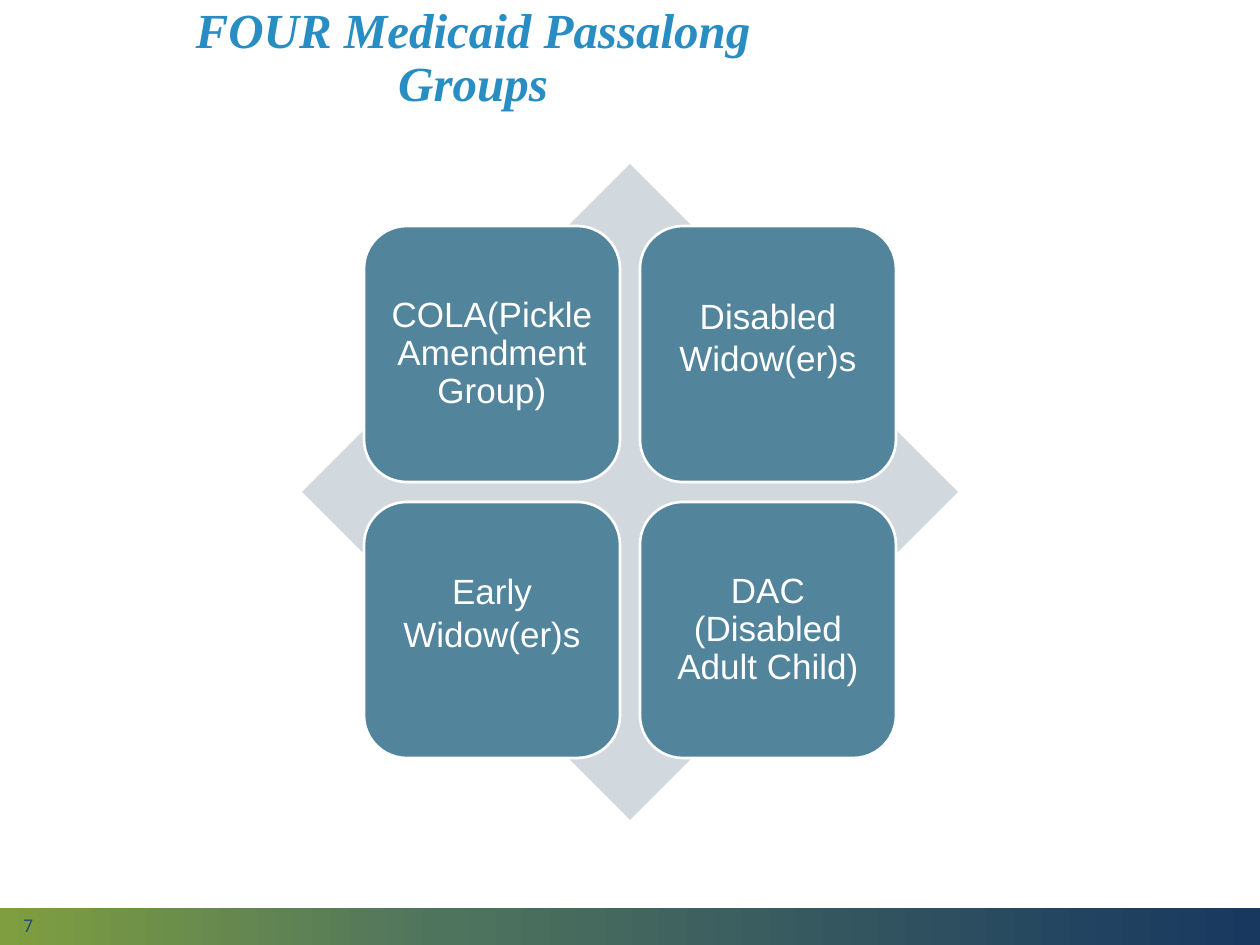
from copy import deepcopy
from typing import NamedTuple

from pptx import Presentation
from pptx.dml.color import RGBColor
from pptx.enum.shapes import MSO_SHAPE
from pptx.enum.text import MSO_ANCHOR, PP_ALIGN
from pptx.util import Pt

PX = 914400 // 126
RECT, ROUND, DIAMOND = MSO_SHAPE.RECTANGLE, MSO_SHAPE.ROUNDED_RECTANGLE, MSO_SHAPE.DIAMOND
MIDDLE = MSO_ANCHOR.MIDDLE
LEFT, CENTER = PP_ALIGN.LEFT, PP_ALIGN.CENTER

TILE, PITCH = 256, 276
GRID_X, GRID_Y = 364, 226
INSET = 10


class Box(NamedTuple):
    x: int
    y: int
    w: int
    h: int

    def emu(self) -> list[int]:
        return [side * PX for side in self]


class Group(NamedTuple):
    text: str
    spacing: float
    lift: int  # extra bottom inset that raises the text


GROUPS = [
    Group("COLA(Pickle Amendment Group)", 0.9, 0),
    Group("Disabled Widow(er)s", 1.0, 36),
    Group("Early Widow(er)s", 1.0, 36),
    Group("DAC (Disabled Adult Child)", 0.9, 0),
]


def color(code: str) -> RGBColor:
    return RGBColor.from_string(code)


def add_shape(slide, kind, box: Box, fill: str = "", line: str = ""):
    shape = slide.shapes.add_shape(kind, *box.emu())
    shape.shadow.inherit = False
    if fill:
        shape.fill.solid()
        shape.fill.fore_color.rgb = color(fill)
    if line:
        shape.line.color.rgb = color(line)
        shape.line.width = Pt(1.5)
    else:
        shape.line.fill.background()
    return shape


def write(shape, text: str, *, size: int, face: str, ink: str, align=CENTER,
          spacing: float = 1.0, bold: bool = False, italic: bool = False) -> None:
    frame = shape.text_frame
    frame.word_wrap = True
    frame.vertical_anchor = MIDDLE
    para = frame.paragraphs[0]
    para.alignment = align
    para.line_spacing = spacing
    run = para.add_run()
    run.text = text
    font = run.font
    font.size, font.name = Pt(size), face
    font.bold, font.italic = bold, italic
    font.color.rgb = color(ink)


def add_text(slide, box: Box, text: str, **style) -> None:
    write(slide.shapes.add_textbox(*box.emu()), text, **style)


def add_band(slide, box: Box, stops: list[tuple[float, str]]) -> None:
    """Draw a bar with a left-to-right gradient of any number of stops."""
    fill = add_shape(slide, RECT, box).fill
    fill.gradient()
    fill.gradient_angle = 0
    first = fill.gradient_stops[0]._gs
    for _ in stops[2:]:
        first.addnext(deepcopy(first))
    for stop, (place, code) in zip(fill.gradient_stops, stops):
        stop.position = place
        stop.color.rgb = color(code)


def add_tile(slide, index: int, group: Group) -> None:
    row, col = divmod(index, 2)
    box = Box(GRID_X + col * PITCH, GRID_Y + row * PITCH, TILE, TILE)
    tile = add_shape(slide, ROUND, box, "52849C", "FFFFFF")
    frame = tile.text_frame
    frame.margin_left = frame.margin_right = frame.margin_top = INSET * PX
    frame.margin_bottom = (INSET + group.lift) * PX
    write(tile, group.text, size=20, face="Arial", ink="FFFFFF", spacing=group.spacing)


def main() -> None:
    deck = Presentation()
    deck.slide_width, deck.slide_height = 1260 * PX, 945 * PX
    slide = deck.slides.add_slide(deck.slide_layouts[6])

    add_band(slide, Box(0, 908, 1260, 37),
             [(0, "7F9E3F"), (0.35, "4F745E"), (1, "183860")])
    add_text(slide, Box(11, 916, 284, 19), "7",
             size=10, face="Roboto", ink="1F497D", align=LEFT)
    add_text(slide, Box(117, 10, 712, 98), "FOUR Medicaid Passalong Groups",
             size=28, face="Times New Roman", ink="288DC2",
             spacing=0.9, bold=True, italic=True)

    add_shape(slide, DIAMOND, Box(302, 164, 656, 656), "D1D9DE")
    for index, group in enumerate(GROUPS):
        add_tile(slide, index, group)

    deck.save("out.pptx")


if __name__ == "__main__":
    main()
